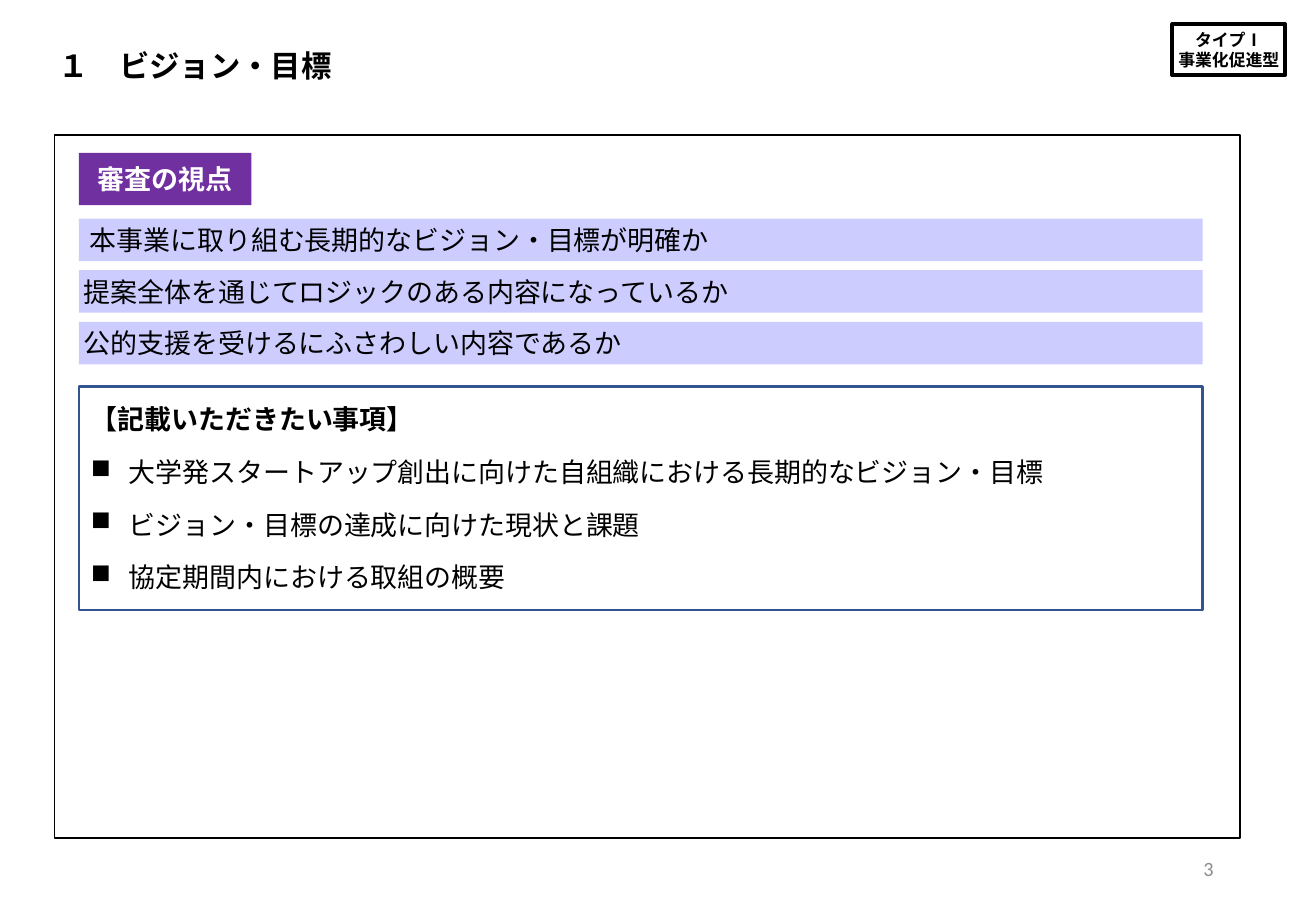
from dataclasses import dataclass

from lxml.etree import SubElement
from pptx import Presentation
from pptx.dml.color import RGBColor
from pptx.enum.shapes import MSO_SHAPE
from pptx.enum.text import MSO_ANCHOR, MSO_AUTO_SIZE, PP_ALIGN
from pptx.oxml.ns import qn
from pptx.shapes.autoshape import Shape
from pptx.slide import Slide
from pptx.text.text import _Paragraph
from pptx.util import Pt

LEFT, WIDTH = 46.8, 666
BAR_TOP, BAR_HEIGHT, BAR_PITCH = 129.6, 25.2, 30.6
TIGHT_INSET = 2.88
BULLET_INDENT = 22.5


@dataclass
class TextStyle:
    size: float = 16
    font: str = "Arial"
    color: str = "000000"
    bold: bool = False
    align: PP_ALIGN = PP_ALIGN.LEFT
    space_before: float = 0


@dataclass
class Box:
    left: float
    top: float
    width: float
    height: float
    fill: str | None = None
    line: str | None = None
    line_width: float = 1


def rgb(color: str) -> RGBColor:
    return RGBColor.from_string(color)


def format_paragraph(paragraph: _Paragraph, style: TextStyle) -> None:
    paragraph.alignment = style.align
    paragraph.space_before = Pt(style.space_before)
    font = paragraph.font
    font.size = Pt(style.size)
    font.name = style.font
    font.bold = style.bold
    font.color.rgb = rgb(style.color)


def write_lines(shape: Shape, lines: list[str], style: TextStyle, inset: float | None = TIGHT_INSET) -> None:
    """Fill the shape with one paragraph per line; an inset of None keeps the default margins."""
    frame = shape.text_frame
    frame.text = "\n".join(lines)
    frame.word_wrap = True
    frame.auto_size = MSO_AUTO_SIZE.NONE
    frame.vertical_anchor = MSO_ANCHOR.MIDDLE
    if inset is not None:
        frame.margin_left = frame.margin_right = Pt(inset)
        frame.margin_top = frame.margin_bottom = Pt(inset)
    for paragraph in frame.paragraphs:
        format_paragraph(paragraph, style)


def add_box(slide: Slide, box: Box) -> Shape:
    shape = slide.shapes.add_shape(
        MSO_SHAPE.RECTANGLE, Pt(box.left), Pt(box.top), Pt(box.width), Pt(box.height)
    )
    shape.shadow.inherit = False
    if box.fill:
        shape.fill.solid()
        shape.fill.fore_color.rgb = rgb(box.fill)
    else:
        shape.fill.background()
    if box.line:
        shape.line.color.rgb = rgb(box.line)
        shape.line.width = Pt(box.line_width)
    else:
        shape.line.fill.background()
    return shape


def add_bullet(paragraph: _Paragraph) -> None:
    properties = paragraph._p.get_or_add_pPr()
    properties.set("marL", str(Pt(BULLET_INDENT)))
    properties.set("indent", str(-Pt(BULLET_INDENT)))
    SubElement(properties, qn("a:buChar")).set("char", "■")
    # The schema wants the bullet ahead of the default run properties.
    default_run = properties.find(qn("a:defRPr"))
    if default_run is not None:
        properties.append(default_run)


def add_title(slide: Slide) -> None:
    title = slide.shapes.title
    title.left, title.top, title.width, title.height = Pt(31.7), Pt(25.2), Pt(175), Pt(27.4)
    write_lines(title, ["１　ビジョン・目標"], TextStyle(18, "Calibri", bold=True))


def add_type_badge(slide: Slide) -> None:
    badge = add_box(slide, Box(694.8, 14.4, 67, 30.2, line="000000", line_width=2.25))
    write_lines(badge, ["タイプⅠ", "事業化促進型"], TextStyle(10, bold=True, align=PP_ALIGN.CENTER))


def add_review_points(slide: Slide) -> None:
    heading = add_box(slide, Box(LEFT, 90.7, 102.2, 31, fill="7030A0"))
    write_lines(heading, ["審査の視点"], TextStyle(color="FFFFFF", bold=True, align=PP_ALIGN.CENTER))
    points = [
        " 本事業に取り組む長期的なビジョン・目標が明確か",
        "提案全体を通じてロジックのある内容になっているか",
        "公的支援を受けるにふさわしい内容であるか",
    ]
    for index, point in enumerate(points):
        bar = add_box(slide, Box(LEFT, BAR_TOP + index * BAR_PITCH, WIDTH, BAR_HEIGHT, fill="CCCCFF"))
        write_lines(bar, [point], TextStyle())


def add_requested_items(slide: Slide) -> None:
    panel = add_box(slide, Box(LEFT, 229, WIDTH, 132.5, "FFFFFF", "325491", 1.5))
    lines = [
        "【記載いただきたい事項】",
        "大学発スタートアップ創出に向けた自組織における長期的なビジョン・目標",
        "ビジョン・目標の達成に向けた現状と課題",
        "協定期間内における取組の概要",
    ]
    write_lines(panel, lines, TextStyle(space_before=12), inset=None)
    heading, *items = panel.text_frame.paragraphs
    heading.font.bold = True
    for item in items:
        add_bullet(item)


def add_page_number(slide: Slide) -> None:
    number = slide.shapes.add_textbox(Pt(550.8), Pt(500.4), Pt(175.7), Pt(28.8))
    write_lines(number, ["3"], TextStyle(12, "Calibri", "8C8C8C", align=PP_ALIGN.RIGHT), inset=None)


def main() -> None:
    presentation = Presentation()
    presentation.slide_width, presentation.slide_height = Pt(780), Pt(540)
    slide = presentation.slides.add_slide(presentation.slide_layouts[5])
    add_type_badge(slide)
    add_title(slide)
    add_box(slide, Box(32.4, 80, 702.7, 416.9, "FFFFFF", "000000"))
    add_review_points(slide)
    add_requested_items(slide)
    add_page_number(slide)
    presentation.save("out.pptx")


if __name__ == "__main__":
    main()
